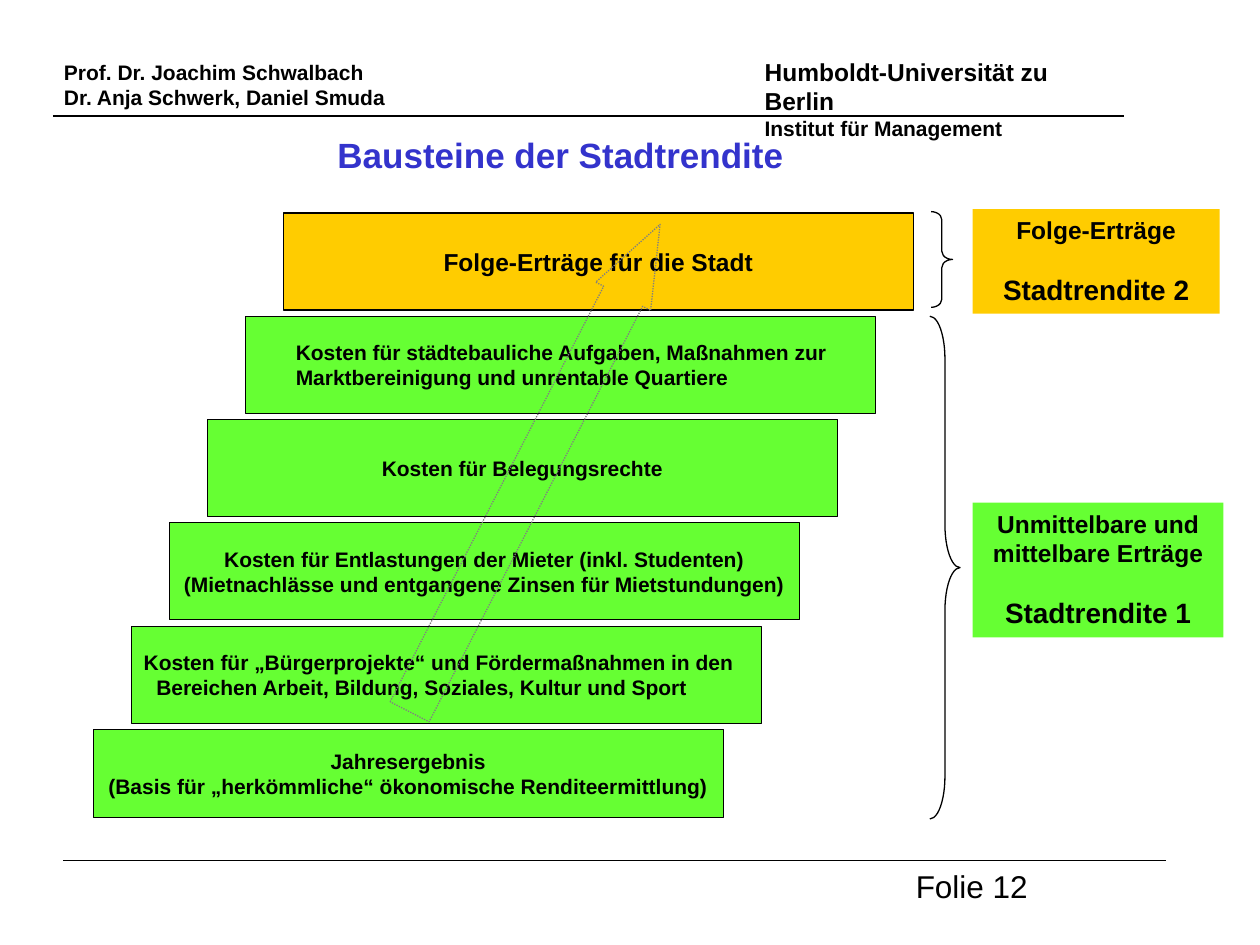
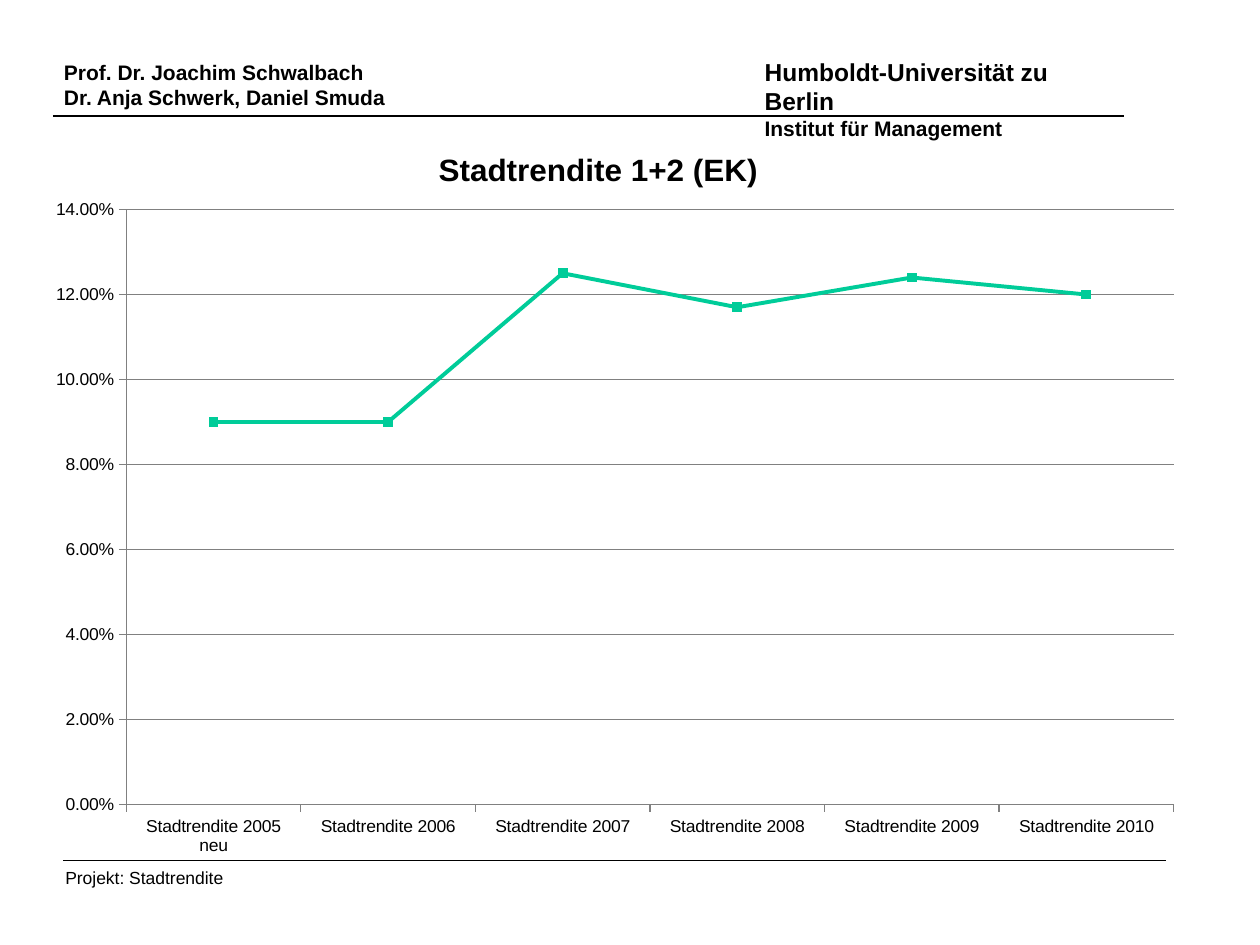
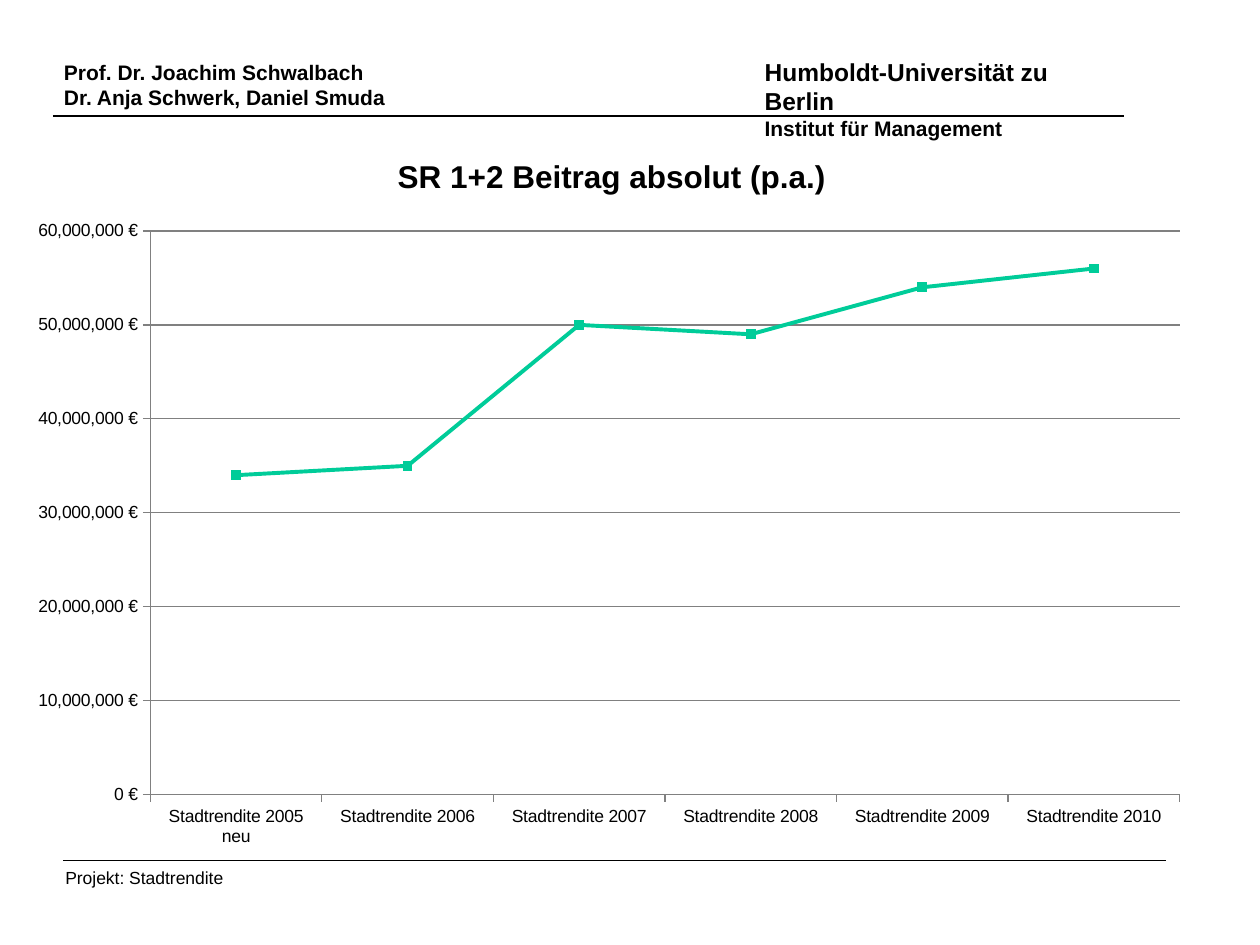
from lxml import etree
from pptx import Presentation
from pptx.chart.data import CategoryChartData
from pptx.dml.color import RGBColor
from pptx.enum.chart import XL_CHART_TYPE, XL_MARKER_STYLE, XL_TICK_MARK
from pptx.enum.dml import MSO_LINE
from pptx.enum.shapes import MSO_CONNECTOR, MSO_SHAPE
from pptx.enum.text import MSO_ANCHOR, PP_ALIGN
from pptx.oxml.ns import qn
from pptx.util import Inches, Pt

LEFT, CENTER = PP_ALIGN.LEFT, PP_ALIGN.CENTER
TOP, MIDDLE = MSO_ANCHOR.TOP, MSO_ANCHOR.MIDDLE
RECTANGLE, BRACE, ARROW = MSO_SHAPE.RECTANGLE, MSO_SHAPE.RIGHT_BRACE, MSO_SHAPE.RIGHT_ARROW
STRAIGHT = MSO_CONNECTOR.STRAIGHT
DOTTED = MSO_LINE.ROUND_DOT
LINE_MARKERS = XL_CHART_TYPE.LINE_MARKERS
SQUARE = XL_MARKER_STYLE.SQUARE
OUTSIDE = XL_TICK_MARK.OUTSIDE

FONT = "Arial"
BLACK, GRAY, BLUE = "000000", "808080", "3333CC"
GREEN, YELLOW, TEAL = "66FF33", "FFCC00", "00CC99"
YEARS = ["Stadtrendite 2005 neu"] + [f"Stadtrendite {year}" for year in range(2006, 2011)]

STEPS = [
    (YELLOW, 14, CENTER, {}, ["Folge-Erträge für die Stadt"]),
    (GREEN, 12, LEFT, {"margin_left": Inches(0.4)},
     ["Kosten für städtebauliche Aufgaben, Maßnahmen zur Marktbereinigung "
      "und unrentable Quartiere"]),
    (GREEN, 12, CENTER, {}, ["Kosten für Belegungsrechte"]),
    (GREEN, 12, CENTER, {},
     ["Kosten für Entlastungen der Mieter (inkl. Studenten) "
      "(Mietnachlässe und entgangene Zinsen für Mietstundungen)"]),
    (GREEN, 12, LEFT, {},
     ["Kosten für „Bürgerprojekte“ und Fördermaßnahmen in den "
      "Bereichen Arbeit, Bildung, Soziales, Kultur und Sport"]),
    (GREEN, 12, CENTER, {},
     ["Jahresergebnis", "(Basis für „herkömmliche“ ökonomische Renditeermittlung)"]),
]


def rgb(value):
    return RGBColor.from_string(value)


def apply(target, values):
    for name, value in values.items():
        setattr(target, name, value)


def style_font(font, size, bold=False, color=BLACK):
    apply(font, {"name": FONT, "size": Pt(size), "bold": bold})
    font.color.rgb = rgb(color)


def style_line(line, color=BLACK, width=0.75):
    line.color.rgb = rgb(color)
    line.width = Pt(width)


def write(shape, lines, align=LEFT, anchor=TOP, bold=True, color=BLACK, margins=None):
    frame = shape.text_frame
    apply(frame, {"word_wrap": True, "vertical_anchor": anchor, **(margins or {})})
    for index, (text, size, gap) in enumerate(lines):
        para = frame.add_paragraph() if index else frame.paragraphs[0]
        para.alignment = align
        if gap:
            para.space_before = Pt(gap)
        span = para.add_run()
        span.text = text
        style_font(span.font, size, bold, color)


def add_text(page, place, lines, **options):
    box = page.shapes.add_textbox(*map(Inches, place))
    write(box, lines, **options)


def add_figure(page, kind, place, fill=None, line=BLACK, adjustments=()):
    shape = page.shapes.add_shape(kind, *map(Inches, place))
    shape.shadow.inherit = False
    if fill:
        shape.fill.solid()
        shape.fill.fore_color.rgb = rgb(fill)
    else:
        shape.fill.background()
    if line:
        style_line(shape.line, line)
    else:
        shape.line.fill.background()
    for index, value in enumerate(adjustments):
        shape.adjustments[index] = value
    return shape


def add_rule(page, left, right, top):
    rule = page.shapes.add_connector(STRAIGHT, *map(Inches, (left, top, right, top)))
    style_line(rule.line)
    etree.SubElement(rule._element.spPr, qn("a:effectLst"))


def add_page(deck):
    page = deck.slides.add_slide(deck.slide_layouts[6])
    add_rule(page, 0.42, 8.92, 0.92)
    add_rule(page, 0.5, 9.25, 6.83)
    add_text(page, (0.41, 0.42, 2.8, 0.5),
             [("Prof. Dr. Joachim Schwalbach", 12, 0), ("Dr. Anja Schwerk, Daniel Smuda", 12, 0)])
    add_text(page, (5.97, 0.4, 3.05, 0.53),
             [("Humboldt-Universität zu Berlin", 14, 0), ("Institut für Management", 12, 0)])
    return page


def add_steps(page):
    first_left, last_left = 2.25, 0.74
    shift = (first_left - last_left) / (len(STEPS) - 1)
    for index, (fill, size, align, margins, texts) in enumerate(STEPS):
        height = 0.7 if index == len(STEPS) - 1 else 0.77
        place = (first_left - index * shift, 1.69 + index * 0.82, 5, height)
        step = add_figure(page, RECTANGLE, place, fill)
        write(step, [(text, size, 0) for text in texts], align, MIDDLE, margins=margins)
        if "Bürgerprojekte" in texts[0]:
            properties = step.text_frame.paragraphs[0]._p.get_or_add_pPr()
            properties.set("marL", str(Inches(0.1)))
            properties.set("indent", str(Inches(-0.1)))


def add_result(page, place, fill, source, name):
    result = add_figure(page, RECTANGLE, place, fill, None)
    write(result, [(source, 14, 0), (name, 16, 16)], CENTER)


def set_plot_layout(chart, bounds):
    area = chart._chartSpace.chart.plotArea
    for old in area.findall(qn("c:layout")):
        area.remove(old)
    layout = etree.Element(qn("c:layout"))
    manual = etree.SubElement(layout, qn("c:manualLayout"))
    settings = [("layoutTarget", "inner"), ("xMode", "edge"), ("yMode", "edge")]
    settings += zip("xywh", map(str, bounds))
    for name, value in settings:
        etree.SubElement(manual, qn(f"c:{name}")).set("val", value)
    area.insert(0, layout)


def add_line_chart(page, place, title, values, number_format, top_value, unit, bounds):
    data = CategoryChartData()
    data.categories = YEARS
    data.add_series(title, values)
    chart = page.shapes.add_chart(LINE_MARKERS, *map(Inches, place), data).chart
    style_font(chart.font, 10)
    chart.has_legend = False
    chart.has_title = True
    chart.chart_title.include_in_layout = False
    span = chart.chart_title.text_frame.paragraphs[0].add_run()
    span.text = title
    style_font(span.font, 18, True)
    set_plot_layout(chart, bounds)

    scale = chart.value_axis
    apply(scale, {"minimum_scale": 0, "maximum_scale": top_value, "major_unit": unit,
                  "has_major_gridlines": True})
    apply(scale.tick_labels, {"number_format": number_format, "number_format_is_linked": False})
    style_line(scale.major_gridlines.format.line, GRAY)
    for axis in (scale, chart.category_axis):
        axis.major_tick_mark = OUTSIDE
        style_line(axis.format.line, GRAY)

    chart.plots[0].vary_by_categories = False
    series = chart.plots[0].series[0]
    series.smooth = False
    style_line(series.format.line, TEAL, 2.25)
    apply(series.marker, {"style": SQUARE, "size": 5})
    series.marker.format.fill.solid()
    series.marker.format.fill.fore_color.rgb = rgb(TEAL)
    style_line(series.marker.format.line, TEAL)


def build_components(deck):
    page = add_page(deck)
    add_text(page, (7.17, 6.83, 2.33, 0.52), [("Folie 12", 18, 0)], bold=False)
    add_text(page, (2.58, 1.01, 4.16, 0.43), [("Bausteine der Stadtrendite", 20, 0)], color=BLUE)
    add_steps(page)
    arrow = add_figure(page, ARROW, (2.07, 3.47, 4.35, 0.49), None, GRAY, (0.71, 1.31))
    arrow.rotation = 297.2
    arrow.line.dash_style = DOTTED
    add_figure(page, BRACE, (7.38, 2.51, 0.24, 3.99), adjustments=(1.41, 0.5))
    add_figure(page, BRACE, (7.39, 1.68, 0.17, 0.76), adjustments=(0.38, 0.5))
    add_result(page, (7.72, 1.66, 1.96, 0.83), YELLOW, "Folge-Erträge", "Stadtrendite 2")
    add_result(page, (7.72, 3.99, 1.99, 1.07), GREEN,
               "Unmittelbare und mittelbare Erträge", "Stadtrendite 1")


def build_chart_page(deck, *chart):
    page = add_page(deck)
    add_text(page, (0.42, 6.83, 2.67, 0.5), [("Projekt: Stadtrendite", 10, 0)], bold=False)
    add_line_chart(page, *chart)


def main():
    deck = Presentation()
    apply(deck, {"slide_width": Inches(10), "slide_height": Inches(7.5)})
    build_components(deck)
    build_chart_page(deck, (0.18, 0.98, 9.14, 5.81), "Stadtrendite 1+2 (EK)",
                     (0.09, 0.09, 0.125, 0.117, 0.124, 0.12),
                     "0.00%", 0.14, 0.02, (0.09, 0.12, 0.91, 0.83))
    build_chart_page(deck, (0.16, 1.02, 9.39, 5.81), "SR 1+2 Beitrag absolut (p.a.)",
                     [million * 1000000 for million in (34, 35, 50, 49, 54, 56)],
                     '#,##0\\ "€"', 60000000, 10000000, (0.11, 0.14, 0.87, 0.77))
    deck.save("out.pptx")


if __name__ == "__main__":
    main()
